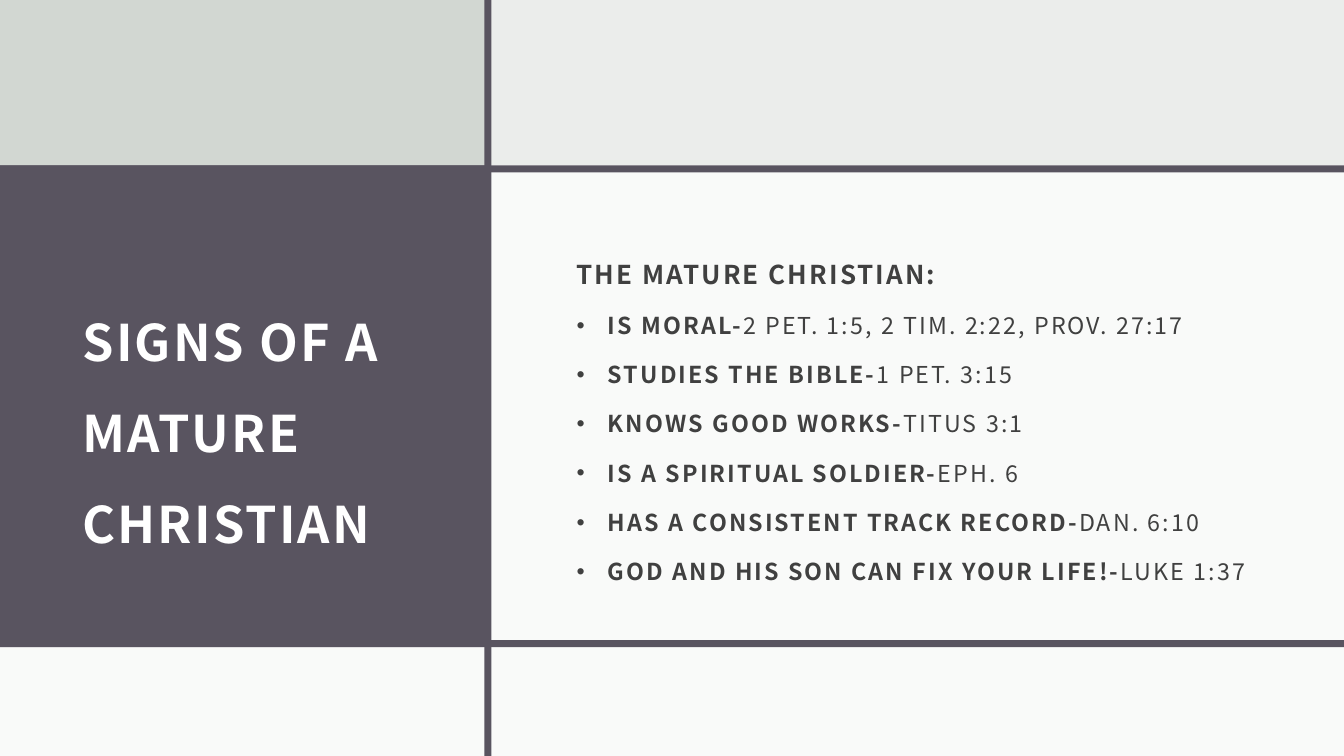
from lxml import etree
from pptx import Presentation
from pptx.dml.color import RGBColor
from pptx.enum.shapes import MSO_SHAPE
from pptx.enum.text import MSO_ANCHOR, PP_ALIGN
from pptx.oxml.ns import qn
from pptx.util import Inches, Pt

RECTANGLE = MSO_SHAPE.RECTANGLE
MIDDLE = MSO_ANCHOR.MIDDLE
LEFT = PP_ALIGN.LEFT

WIDTH, HEIGHT = 13.33, 7.5
COLUMN = 4.84
ROW_TOP, ROW_BOTTOM = 1.64, 6.42
BAR = 0.07
TEXT_TOP, TEXT_HEIGHT = 2.14, 3.98
INDENT = 0.31
FONT = "Noto Sans CJK JP"
COLORS = {
    "background": "EBEDEB",
    "plum": "595460",
    "sage": "D2D7D2",
    "white": "FFFFFF",
    "text": "404040",
}

TITLE = "SIGNS OF A MATURE CHRISTIAN"
HEADING = "THE MATURE CHRISTIAN:"
SIGNS = [
    ("IS MORAL-", "2 PET. 1:5, 2 TIM. 2:22, PROV. 27:17"),
    ("STUDIES THE BIBLE-", "1 PET. 3:15"),
    ("KNOWS GOOD WORKS-", "TITUS 3:1"),
    ("IS A SPIRITUAL SOLDIER-", "EPH. 6"),
    ("HAS A CONSISTENT TRACK RECORD-", "DAN. 6:10"),
    ("GOD AND HIS SON CAN FIX YOUR LIFE!-", "LUKE 1:37"),
]


def color(name):
    return RGBColor.from_string(COLORS[name])


def add_panel(slide, box, fill, opacity=100):
    shape = slide.shapes.add_shape(RECTANGLE, *map(Inches, box))
    shape.shadow.inherit = False
    shape.fill.solid()
    shape.fill.fore_color.rgb = color(fill)
    shape.line.fill.background()
    if opacity < 100:
        fill_color = shape._element.spPr.find(qn("a:solidFill"))[0]
        etree.SubElement(fill_color, qn("a:alpha"), val=str(opacity * 1000))


def add_text_frame(slide, box):
    frame = slide.shapes.add_textbox(*map(Inches, box)).text_frame
    frame.word_wrap = True
    frame.vertical_anchor = MIDDLE
    frame.margin_left = frame.margin_right = frame.margin_top = Inches(0.12)
    frame.margin_bottom = Inches(0.1)
    return frame


def add_run(paragraph, text, size, fill, bold=True):
    run = paragraph.add_run()
    run.text = text
    run.font.name = FONT
    run.font.size = Pt(size)
    run.font.bold = bold
    run.font.color.rgb = color(fill)
    run._r.get_or_add_rPr().set("spc", "150")


def format_paragraph(paragraph, line_spacing, space_before=0):
    paragraph.alignment = LEFT
    paragraph.line_spacing = line_spacing
    paragraph.space_before = Pt(space_before)


def add_bullet(paragraph):
    properties = paragraph._p.get_or_add_pPr()
    properties.set("marL", str(Inches(INDENT)))
    properties.set("indent", str(-Inches(INDENT)))
    etree.SubElement(properties, qn("a:buFont"), typeface="Arial")
    etree.SubElement(properties, qn("a:buChar"), char="•")


def add_title(slide, box):
    paragraph = add_text_frame(slide, box).paragraphs[0]
    format_paragraph(paragraph, 1.5)
    add_run(paragraph, TITLE, 36, "white")


def add_signs(slide, box):
    frame = add_text_frame(slide, box)
    heading = frame.paragraphs[0]
    format_paragraph(heading, 1.3, 9.3)
    add_run(heading, HEADING, 18.5, "text")
    for sign, verses in SIGNS:
        paragraph = frame.add_paragraph()
        format_paragraph(paragraph, 1.3, 9.3)
        add_bullet(paragraph)
        add_run(paragraph, sign, 16.6, "text")
        add_run(paragraph, verses, 16.6, "text", bold=False)


def add_panels(slide):
    row_height = ROW_BOTTOM - ROW_TOP
    add_panel(slide, (0, 0, COLUMN, ROW_TOP), "sage")
    add_panel(slide, (0, ROW_TOP, COLUMN, row_height), "plum")
    add_panel(slide, (COLUMN, ROW_TOP, WIDTH - COLUMN, row_height), "white", 75)
    add_panel(slide, (0, ROW_BOTTOM, WIDTH, HEIGHT - ROW_BOTTOM), "white", 75)


def add_bars(slide):
    for top in (ROW_TOP, ROW_BOTTOM - BAR):
        add_panel(slide, (0, top, WIDTH, BAR), "plum")
    add_panel(slide, (COLUMN - BAR / 2, 0, BAR, HEIGHT), "plum")


def main():
    presentation = Presentation()
    presentation.slide_width = Inches(WIDTH)
    presentation.slide_height = Inches(HEIGHT)
    slide = presentation.slides.add_slide(presentation.slide_layouts[6])
    slide.background.fill.solid()
    slide.background.fill.fore_color.rgb = color("background")
    add_panels(slide)
    add_bars(slide)
    add_title(slide, (0.7, TEXT_TOP, 3.73, TEXT_HEIGHT))
    add_signs(slide, (5.6, TEXT_TOP, 7.52, TEXT_HEIGHT))
    presentation.save("out.pptx")


if __name__ == "__main__":
    main()
